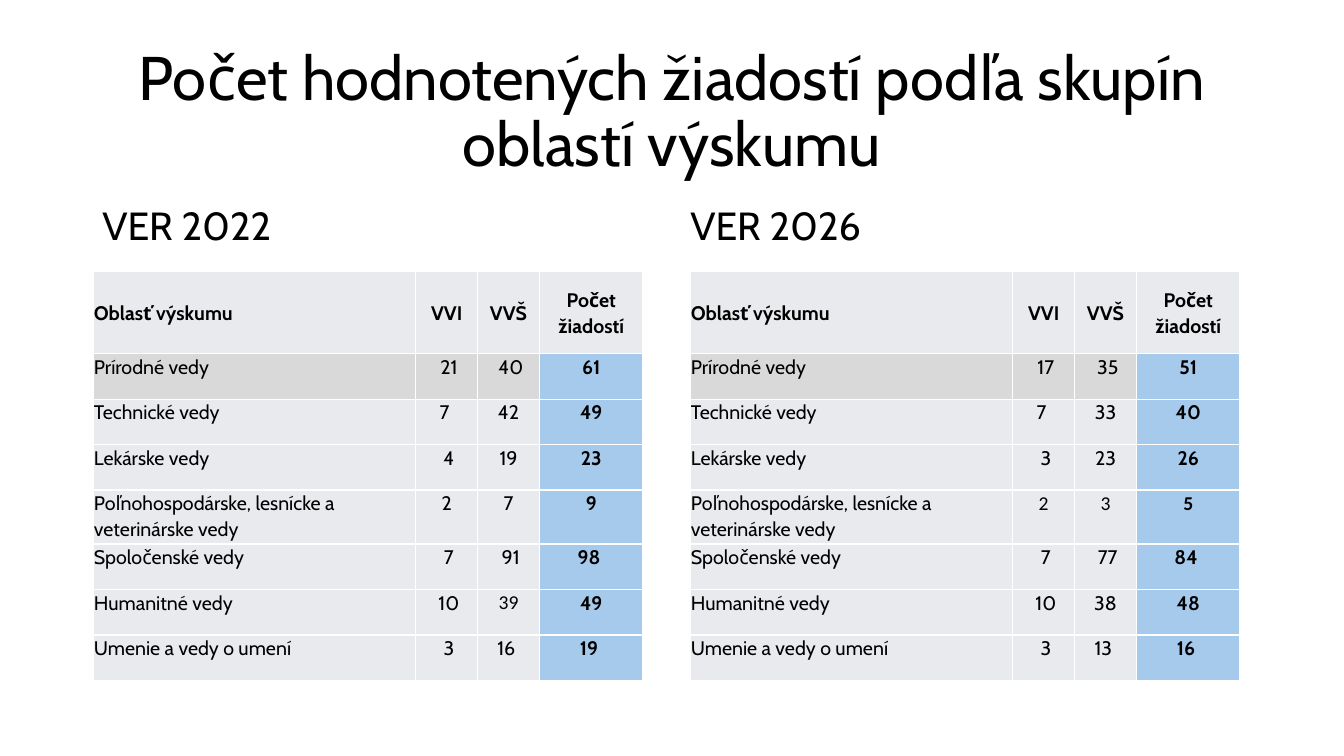
from lxml import etree
from pptx import Presentation
from pptx.dml.color import RGBColor
from pptx.enum import text
from pptx.oxml.ns import qn
from pptx.util import Pt

NBSP = chr(160)
GREY, DARK_GREY, BLUE, WHITE, BLACK = "E8EAED", "D9D9D9", "A6CAEC", "FFFFFF", "000000"
LEFT, CENTER = text.PP_ALIGN.LEFT, text.PP_ALIGN.CENTER
TOP, MIDDLE = text.MSO_ANCHOR.TOP, text.MSO_ANCHOR.MIDDLE


def color(value):
    return RGBColor.from_string(value)


def write(frame, words, size, align=LEFT, spacing=0.9, bold=False, name="Cabin"):
    """Fill the first paragraph of a text frame with formatted words."""
    frame.word_wrap = True
    paragraph = frame.paragraphs[0]
    paragraph.alignment = align
    paragraph.line_spacing = spacing
    run = paragraph.add_run()
    run.text = words
    run.font.color.rgb = color(BLACK)
    for key, value in {"size": Pt(size), "bold": bold, "name": name}.items():
        setattr(run.font, key, value)


presentation = Presentation()
presentation.slide_width, presentation.slide_height = Pt(960), Pt(540)
slide = presentation.slides.add_slide(presentation.slide_layouts[6])

texts = [
    ("Počet hodnotených žiadostí podľa skupín oblastí výskumu",
     (66, 28.75, 828, 104.4), 44, CENTER, MIDDLE),
    ("VER 2022", (66, 143.75, 408, 342.6), 28, LEFT, TOP),
    ("VER 2026", (486, 143.75, 408, 342.6), 28, LEFT, TOP),
]
for words, place, size, align, anchor in texts:
    box = slide.shapes.add_textbox(*[Pt(length) for length in place])
    box.text_frame.vertical_anchor = anchor
    write(box.text_frame, words, size, align)

headers = ["Oblasť výskumu", "VVI", "VVŠ", "Počet žiadostí"]
areas = ["Prírodné vedy", "Technické vedy", "Lekárske vedy",
         "Poľnohospodárske, lesnícke a veterinárske vedy",
         "Spoločenské vedy", "Humanitné vedy", "Umenie a vedy o umení"]
column_widths = [230.6, 44.2, 44.2, 74]
row_heights = [58.6, 32.5, 32.5, 32.5, 38.5, 32.5, 32.5, 32.5]

# "~" stands for a non-breaking space; calibri lists (row, column) cells
tables = [
    {"left": 66.4, "calibri": [(6, 2)],
     "counts": ["~21 ~40 61", "7~ 42 49", "~4 19 23", "2 7 9",
                "~7 ~91 98~", "~10 39 49", "~3 16~ 19~"]},
    {"left": 492.8, "calibri": [(4, 1), (4, 2), (4, 3)],
     "counts": ["~17 ~35 51", "7~ 33 40", "~3 23 26", "2 3 5",
                "~7 ~77 84~", "~10 38 48", "~3 13~ 16~"]},
]

for data in tables:
    rows = [headers]
    for area, counts in zip(areas, data["counts"]):
        rows.append([area] + [count.replace("~", NBSP) for count in counts.split()])
    frame = slide.shapes.add_table(len(rows), len(headers), Pt(data["left"]), Pt(194),
                                   Pt(sum(column_widths)), Pt(sum(row_heights)))
    table = frame.table
    table.first_row = table.horz_banding = False
    for column, width in zip(table.columns, column_widths):
        column.width = Pt(width)
    for row, height in zip(table.rows, row_heights):
        row.height = Pt(height)

    for r, values in enumerate(rows):
        for c, value in enumerate(values):
            cell = table.cell(r, c)
            properties = cell._tc.get_or_add_tcPr()
            for side in ("lnL", "lnR", "lnT", "lnB"):
                border = etree.SubElement(properties, qn("a:" + side), w=str(Pt(1)))
                fill = etree.SubElement(border, qn("a:solidFill"))
                etree.SubElement(fill, qn("a:srgbClr"), val=WHITE)
            is_total = r > 0 and c == 3
            cell.fill.solid()
            cell.fill.fore_color.rgb = color(
                BLUE if is_total else DARK_GREY if r == 1 else GREY)
            layout = {"margin_left": Pt(0.7), "margin_right": Pt(0.7),
                      "margin_top": 0, "margin_bottom": 0,
                      "vertical_anchor": MIDDLE if r == 0 else TOP}
            for key, setting in layout.items():
                setattr(cell, key, setting)
            write(cell.text_frame, value, 14, CENTER if c else LEFT, 1.07,
                  bold=r == 0 or is_total,
                  name="Calibri" if (r, c) in data["calibri"] else "Cabin")

presentation.save("out.pptx")
